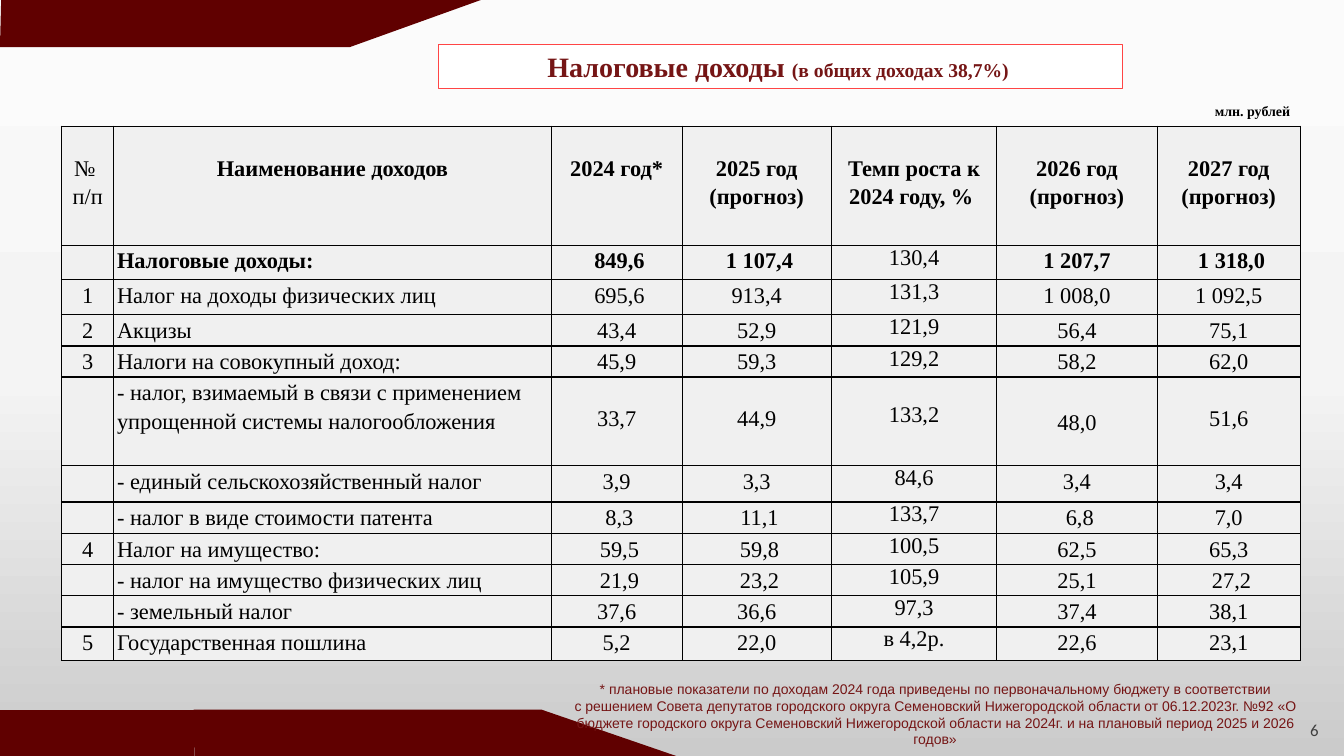
"""Build the slide with the table of tax revenues for 2024-2027."""
from copy import deepcopy

from lxml import etree
from pptx import Presentation
from pptx import util as u
from pptx.dml.color import RGBColor
from pptx.enum import shapes, text
from pptx.oxml import ns

COLORS = {"maroon": "600000", "wine": "751515", "red": "FF4545", "black": "000000",
          "white": "FFFFFF", "cell": "F0F0F0", "number": "3F3F3F",
          "sky": "FBFBFB", "mist": "F4F4F4", "ash": "CBCBCB"}
SERIF = "Times New Roman"
CENTER, LEFT = text.PP_ALIGN.CENTER, text.PP_ALIGN.LEFT


def color(name):
    return RGBColor.from_string(COLORS[name])


def write(frame, lines, font, ink, align=CENTER, spacing=None):
    frame.word_wrap = True
    for index, spans in enumerate(lines):
        para = frame.paragraphs[0] if index == 0 else frame.add_paragraph()
        para.alignment = align
        para.line_spacing = spacing
        for words, size, bold in spans:
            span = para.add_run()
            span.text = words
            span.font.name = font
            span.font.size = u.Pt(size)
            span.font.bold = bold
            span.font.color.rgb = color(ink)


deck = Presentation()
deck.slide_width, deck.slide_height = u.Cm(33.87), u.Cm(19.05)
page = deck.slides.add_slide(deck.slide_layouts[6])

backdrop = page.background.fill
backdrop.gradient()
backdrop.gradient_angle = 270
stops = page._element.find(".//" + ns.qn("a:gsLst"))
stops.insert(1, deepcopy(stops[0]))
for stop, place, name in zip(backdrop.gradient_stops, (0, 0.5, 1), ("sky", "mist", "ash")):
    stop.position = place
    stop.color.rgb = color(name)

strips = [
    [(0, 1.19), (8.81, 1.19), (12.12, 0), (0.03, 0)],
    [(4.9, 19.05), (17.04, 19.05), (13.64, 17.88), (4.88, 17.88)],
    [(0, 17.88), (4.9, 17.88), (4.9, 19.05), (0, 19.05)],
]
for corners in strips:
    points = [(u.Cm(x), u.Cm(y)) for x, y in corners]
    outline = page.shapes.build_freeform(*points[0])
    outline.add_line_segments(points[1:], close=True)
    strip = outline.convert_to_shape()
    strip.shadow.inherit = False
    strip.fill.solid()
    strip.fill.fore_color.rgb = color("maroon")
    strip.line.fill.background()

unit = page.shapes.add_textbox(u.Cm(29.57), u.Cm(2.36), u.Cm(3.99), u.Cm(0.94))
unit.text_frame.margin_top = unit.text_frame.margin_bottom = u.Cm(0.25)
write(unit.text_frame, [[("млн. рублей", 10, True)]], SERIF, "black")

widths = [1.32, 11.02, 3.3, 3.76, 4.17, 4.04, 3.61]
heights = [3, 0.86, 0.89, 0.79, 0.76, 2.24, 0.91, 0.79, 0.79, 0.76, 0.79, 0.84]
rows = [
    ["№ \nп/п", "Наименование доходов", "2024 год*", "2025 год\n(прогноз)",
     "Темп роста к 2024 году, % ", "2026 год\n(прогноз)", "2027 год\n(прогноз)"],
    ["", "Налоговые доходы:", " 849,6", " 1 107,4", "130,4", "1 207,7", " 1 318,0"],
    ["1", "Налог на доходы физических лиц", " 695,6", "913,4", "131,3", "1 008,0", "1 092,5"],
    ["2", "Акцизы", "43,4", "52,9", "121,9", "56,4", "75,1"],
    ["3", "Налоги на совокупный доход:", "45,9", "59,3", "129,2", "58,2", "62,0"],
    ["", "- налог, взимаемый в связи с применением упрощенной системы налогообложения",
     "33,7", "44,9", "133,2", "48,0", "51,6"],
    ["", "- единый сельскохозяйственный налог", "3,9", "3,3", "84,6", "3,4", "3,4"],
    ["", "- налог в виде стоимости патента", " 8,3", " 11,1", "133,7", " 6,8", "7,0"],
    ["4", "Налог на имущество:", " 59,5", " 59,8", "100,5", "62,5", "65,3"],
    ["", "- налог на имущество физических лиц", " 21,9", " 23,2", "105,9", "25,1", " 27,2"],
    ["", "- земельный налог", "37,6", "36,6", "97,3", "37,4", "38,1"],
    ["5", "Государственная пошлина", "5,2", "22,0", "в 4,2р.", "22,6", "23,1"],
]
HEADER, TOTAL, SIMPLIFIED = 0, 1, 5
NUMBER, NAME, GROWTH, NEXT_YEAR = 0, 1, 4, 5

frame = page.shapes.add_table(len(rows), len(widths), u.Cm(1.55), u.Cm(3.18),
                              u.Cm(sum(widths)), u.Cm(sum(heights)))
table = frame.table
table.first_row = table.horz_banding = False
for column, width in zip(table.columns, widths):
    column.width = u.Cm(width)
for line, height in zip(table.rows, heights):
    line.height = u.Cm(height)

for r, values in enumerate(rows):
    for c, value in enumerate(values):
        cell = table.cell(r, c)
        cell.margin_left = cell.margin_right = u.Cm(0.08)
        cell.margin_top = cell.margin_bottom = 0
        if r == HEADER:
            cell.margin_top = u.Cm(0.66)
        elif r == SIMPLIFIED and c > NAME:
            cell.margin_top = u.Cm(0.76 if c == NEXT_YEAR else 0.64)
        bold = (r == HEADER and c != NUMBER) or (r == TOTAL and c != GROWTH)
        write(cell.text_frame, [[(words, 16, bold)] for words in value.split("\n")],
              SERIF, "black", LEFT if c == NAME and r != HEADER else CENTER,
              1.0 if c == GROWTH and r != HEADER else 1.15)
        props = cell._tc.get_or_add_tcPr()
        for side in ("lnL", "lnR", "lnT", "lnB"):
            border = etree.SubElement(props, ns.qn("a:" + side), w=str(u.Pt(1)))
            paint = etree.SubElement(border, ns.qn("a:solidFill"))
            etree.SubElement(paint, ns.qn("a:srgbClr"), val=COLORS["black"])
        cell.fill.solid()
        cell.fill.fore_color.rgb = color("cell")

footnote = page.shapes.add_textbox(u.Cm(13.94), u.Cm(17.02), u.Cm(19.25), u.Cm(1.96))
write(footnote.text_frame, [
    [("* плановые показатели по доходам 2024 года приведены по первоначальному бюджету "
      "в соответствии", 10, False)],
    [("с решением Совета депутатов городского округа Семеновский Нижегородской области "
      "от 06.12.2023г. №92 «О бюджете городского округа Семеновский Нижегородской области "
      "на 2024г. и на плановый период 2025 и 2026 годов»", 10, False)],
], "Arial", "wine")

title = page.shapes.add_shape(shapes.MSO_SHAPE.RECTANGLE,
                              u.Cm(11.05), u.Cm(1.12), u.Cm(17.25), u.Cm(1.12))
title.shadow.inherit = False
title.fill.solid()
title.fill.fore_color.rgb = color("white")
title.line.color.rgb = color("red")
title.line.width = u.Pt(0.75)
title.text_frame.vertical_anchor = text.MSO_ANCHOR.MIDDLE
write(title.text_frame, [[("Налоговые доходы ", 20, True),
                          ("(в общих доходах 38,7%) ", 14, True)]], SERIF, "wine")

number = page.shapes.add_textbox(u.Cm(32.77), u.Cm(18.08), u.Cm(0.99), u.Cm(0.95))
write(number.text_frame, [[("6", 12, False)]], "Calibri", "number", LEFT, 0.9)

deck.save("out.pptx")
